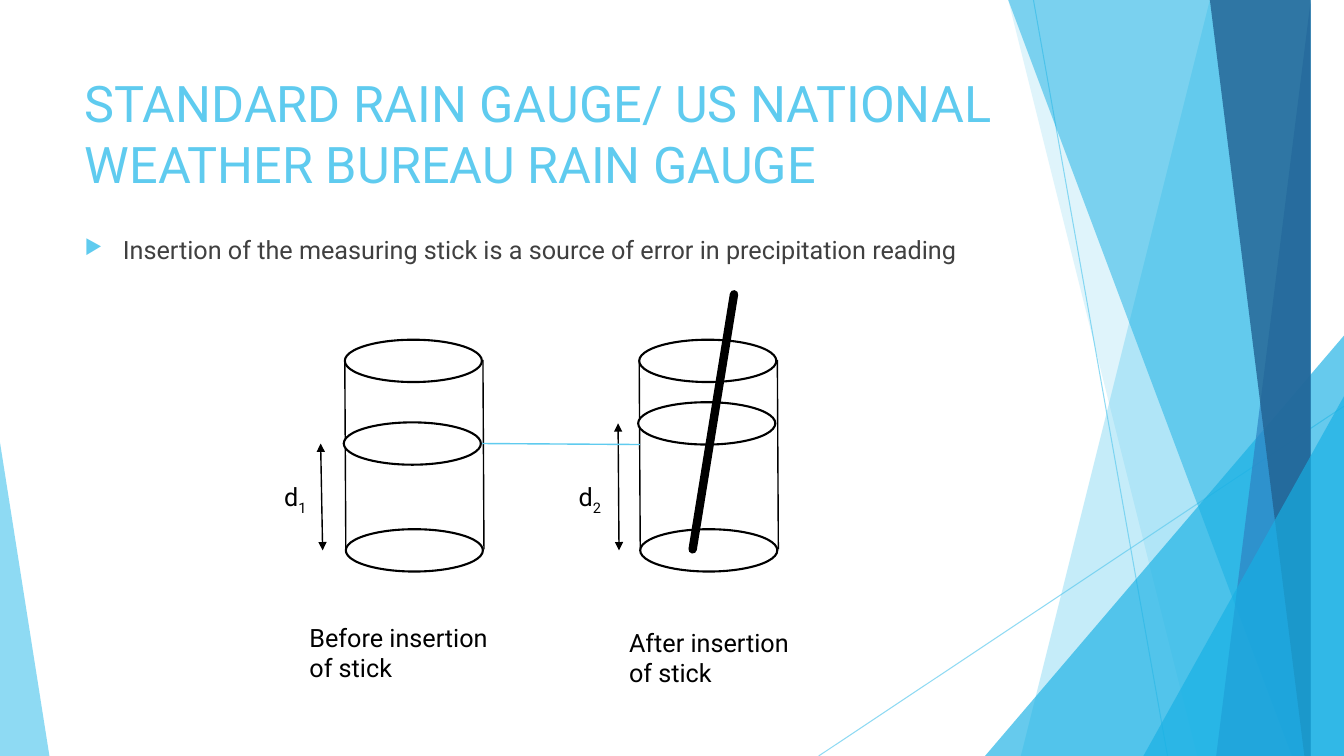
import pptx
import pptx.util
import pptx.dml.color
import pptx.enum.shapes
import pptx.enum.text
import pptx.oxml
import pptx.oxml.ns
from pptx.util import Inches

COLORS = {"sky": "5FCBEF", "cyan": "17B0E4", "blue": "2E83C3", "navy": "226292",
          "body": "404040", "black": "000000", "white": "FFFFFF"}
FONT = "Roboto"
SHAPES = pptx.enum.shapes.MSO_SHAPE
TOP, BOTTOM, RIGHT = -0.01, 7.5, 13.33
RIM_WIDTH, RIM_HEIGHT = 1.36, 0.42


def rgb(name):
    """Return the named colour."""
    return pptx.dml.color.RGBColor.from_string(COLORS[name])


def add_xml(parent, tag, **attributes):
    """Append a drawing element and return it."""
    element = pptx.oxml.parse_xml(f"<a:{tag} {pptx.oxml.ns.nsdecls('a')}/>")
    for name, value in attributes.items():
        element.set(name, str(value))
    parent.append(element)
    return element


def set_alpha(fill_owner, percent):
    """Set the opacity of the solid colour inside an element."""
    color = fill_owner.find(".//" + pptx.oxml.ns.qn("a:srgbClr"))
    add_xml(color, "alpha", val=percent * 1000)


def paint(shape, color, opacity):
    """Give a decoration a translucent fill without an outline."""
    shape.shadow.inherit = False
    shape.fill.solid()
    shape.fill.fore_color.rgb = rgb(color)
    shape.line.fill.background()
    set_alpha(shape.fill._xPr, opacity)


def add_band(slide, top_left, top_right, bottom_right, bottom_left, color, opacity):
    """Draw a full-height slanted band."""
    builder = slide.shapes.build_freeform(top_left, TOP, scale=Inches(1))
    builder.add_line_segments([(top_right, TOP), (bottom_right, BOTTOM), (bottom_left, BOTTOM)])
    paint(builder.convert_to_shape(), color, opacity)


def add_corner(slide, left, top, width, height, apex, color, opacity):
    """Draw a right-angled triangle resting on the bottom edge."""
    corner = slide.shapes.add_shape(SHAPES.ISOSCELES_TRIANGLE, Inches(left), Inches(top),
                                    Inches(width), Inches(height))
    corner.adjustments[0] = apex
    paint(corner, color, opacity)


def add_line(slide, start, end, color="black", width=1, opacity=100, arrows=False, cap=None):
    """Draw a straight line, with arrowheads at both ends on request."""
    line = slide.shapes.add_connector(pptx.enum.shapes.MSO_CONNECTOR.STRAIGHT,
                                      *map(Inches, (*start, *end)))
    line.line.color.rgb = rgb(color)
    line.line.width = pptx.util.Pt(width)
    outline = line.line._get_or_add_ln()
    if opacity < 100:
        set_alpha(outline, opacity)
    if cap:
        outline.set("cap", cap)
    if arrows:
        add_xml(outline, "headEnd", type="triangle")
        add_xml(outline, "tailEnd", type="triangle")
    add_xml(line._element.spPr, "effectLst")


def add_rim(slide, left, top):
    """Draw one ellipse of a cylinder."""
    rim = slide.shapes.add_shape(SHAPES.OVAL, Inches(left), Inches(top),
                                 Inches(RIM_WIDTH), Inches(RIM_HEIGHT))
    rim.shadow.inherit = False
    rim.fill.solid()
    rim.fill.fore_color.rgb = rgb("white")
    rim.line.color.rgb = rgb("black")
    rim.line.width = pptx.util.Pt(1.5)


def add_gauge(slide, left, water_top):
    """Draw a rain gauge filled up to the water level."""
    add_rim(slide, left, 3.37)
    add_rim(slide, left + 0.01, 5.25)
    add_line(slide, (left, 3.58), (left + 0.01, 5.46))
    add_line(slide, (left + 1.37, 3.57), (left + 1.38, 5.45))
    add_rim(slide, left - 0.01, water_top)


def style(paragraph, size, color):
    """Set the font of a whole paragraph."""
    paragraph.font.name = FONT
    paragraph.font.size = pptx.util.Pt(size)
    paragraph.font.color.rgb = rgb(color)


def add_text(slide, left, top, width, height, text, subscript="", wrap=True, color="black"):
    """Add an 18 pt text box, optionally ending in a subscript, and return its paragraph."""
    frame = slide.shapes.add_textbox(*map(Inches, (left, top, width, height))).text_frame
    frame.word_wrap = wrap
    paragraph = frame.paragraphs[0]
    paragraph.add_run().text = text
    style(paragraph, 18, color)
    if subscript:
        index = paragraph.add_run()
        index.text = subscript
        index.font._element.set("baseline", "-25000")
    return paragraph


def add_bullet(paragraph):
    """Give a paragraph a hanging triangular bullet."""
    paragraph.space_before = pptx.util.Pt(10)
    properties = paragraph._p.get_or_add_pPr()
    properties.set("marL", str(Inches(0.38)))
    properties.set("indent", str(Inches(-0.38)))
    defaults = properties.find(pptx.oxml.ns.qn("a:defRPr"))
    add_xml(add_xml(properties, "buClr"), "srgbClr", val=COLORS["sky"])
    add_xml(properties, "buSzPct", val=80000)
    add_xml(properties, "buChar", char="▶")
    properties.append(defaults)


def add_title(slide, text):
    """Place and format the title."""
    title = slide.shapes.title
    title.left, title.top, title.width, title.height = map(Inches, (0.74, 0.67, 9.4, 1.44))
    frame = title.text_frame
    frame.text = text
    frame.word_wrap = True
    frame.auto_size = pptx.enum.text.MSO_AUTO_SIZE.NONE
    frame.vertical_anchor = pptx.enum.text.MSO_ANCHOR.TOP
    frame.paragraphs[0].alignment = pptx.enum.text.PP_ALIGN.LEFT
    style(frame.paragraphs[0], 36, "sky")


def add_decoration(slide):
    """Draw the translucent facets along the slide edges."""
    add_line(slide, (10.25, 0), (11.58, BOTTOM), "sky", 0.75, 70)
    add_line(slide, (RIGHT, 4.03), (8.12, BOTTOM), "sky", 0.75, 70)
    add_band(slide, 12.28, RIGHT, RIGHT, 10.04, "sky", 36)
    add_band(slide, 10.5, RIGHT, RIGHT, 11.83, "sky", 20)
    add_corner(slide, 9.77, 3.33, 3.56, 4.17, 1, "cyan", 66)
    add_band(slide, 10.21, RIGHT, RIGHT, 12.91, "cyan", 50)
    add_band(slide, 13.03, RIGHT, RIGHT, 11.92, "blue", 70)
    add_band(slide, 11.96, RIGHT, RIGHT, 13.18, "navy", 80)
    add_corner(slide, 11.34, 3.93, 1.99, 3.57, 1, "cyan", 66)
    add_corner(slide, 0, 4.39, 0.49, 3.11, 0, "sky", 70)


def main():
    """Build the rain gauge slide."""
    deck = pptx.Presentation()
    deck.slide_width, deck.slide_height = Inches(13.33), Inches(7.5)
    slide = deck.slides.add_slide(deck.slide_layouts.get_by_name("Title Only"))
    add_decoration(slide)
    add_title(slide, "STANDARD RAIN GAUGE/ US NATIONAL WEATHER BUREAU RAIN GAUGE")
    add_bullet(add_text(slide, 0.74, 2.28, 9.4, 4.24, "Insertion of the measuring stick is "
                        "a source of error in precipitation reading", color="body"))
    add_gauge(slide, 3.42, 4.19)
    add_line(slide, (3.18, 4.4), (3.2, 5.46), arrows=True)
    add_text(slide, 2.72, 4.73, 0.43, 0.4, "d", "1", wrap=False)
    add_gauge(slide, 6.34, 3.99)
    add_line(slide, (6.14, 5.46), (6.13, 4.2), arrows=True)
    add_text(slide, 5.64, 4.73, 0.43, 0.4, "d", "2", wrap=False)
    add_line(slide, (7.28, 2.92), (6.87, 5.45), width=6, cap="rnd")
    add_text(slide, 2.97, 6.12, 2.01, 0.71, "Before insertion of stick")
    add_text(slide, 6.14, 6.17, 2.01, 0.71, "After insertion of stick")
    add_line(slide, (4.78, 4.4), (6.35, 4.41), "sky")
    deck.save("out.pptx")


if __name__ == "__main__":
    main()
